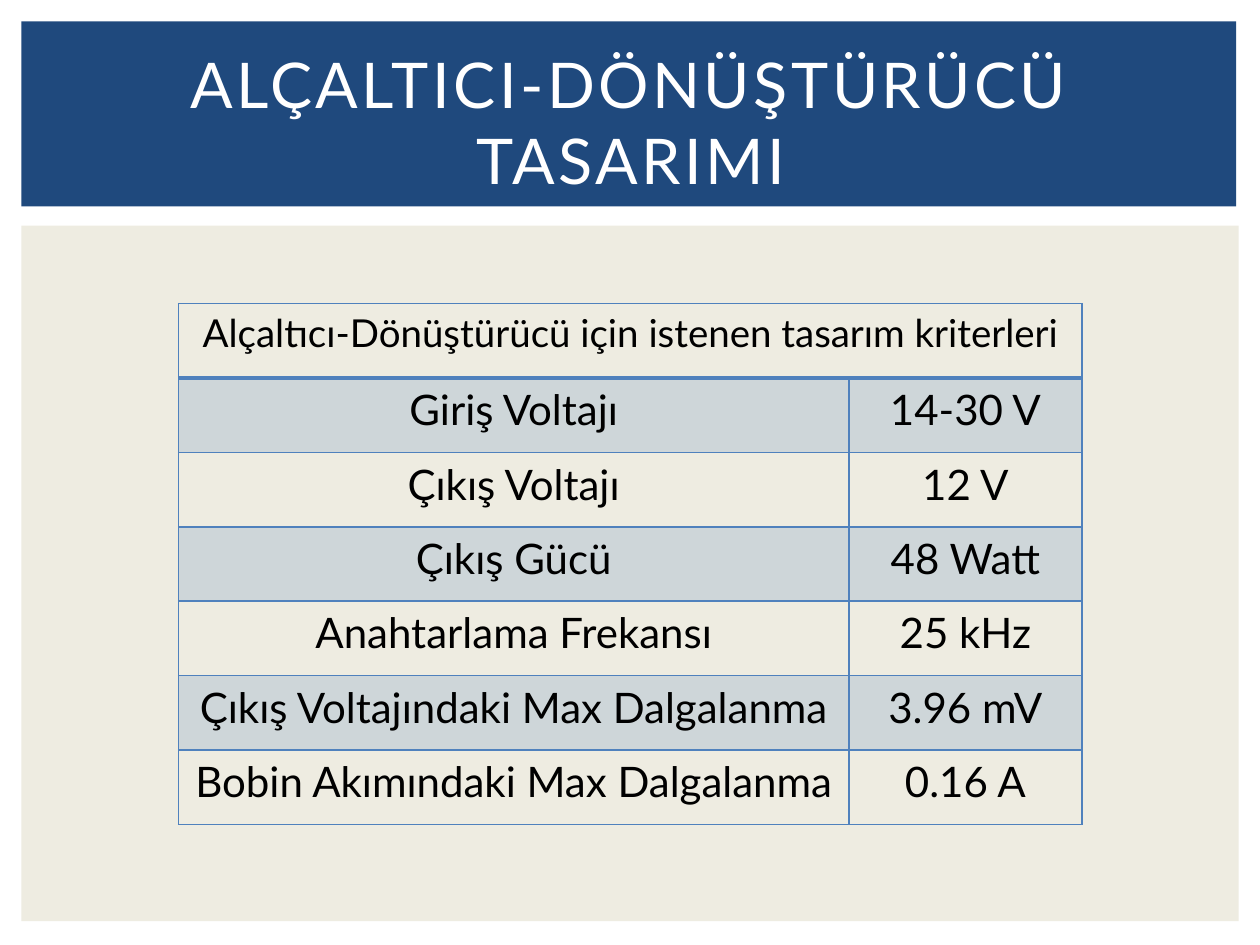
from dataclasses import dataclass

from lxml import etree
from pptx import Presentation
from pptx.dml.color import RGBColor
from pptx.enum.shapes import MSO_SHAPE
from pptx.enum.text import MSO_ANCHOR, MSO_AUTO_SIZE, PP_ALIGN
from pptx.oxml.ns import qn
from pptx.util import Cm, Pt

RECT = MSO_SHAPE.RECTANGLE
MIDDLE = MSO_ANCHOR.MIDDLE
FIXED = MSO_AUTO_SIZE.NONE
CENTER = PP_ALIGN.CENTER

FONT = "Lato"
COLORS = {
    "panel": "EEECE1",
    "band": "1F497D",
    "line": "4F81BD",
    "title": "FFFFFF",
    "text": "000000",
}
SIDES = ("lnL", "lnR", "lnT", "lnB")


@dataclass
class Panel:
    left: float
    top: float
    width: float
    height: float
    color: str


@dataclass
class Row:
    label: str
    value: str


PANELS = [
    Panel(0.43, 4.55, 24.54, 14.02, "panel"),
    Panel(0.43, 0.43, 24.49, 3.73, "band"),
]
TITLE = "ALÇALTICI-DÖNÜŞTÜRÜCÜ TASARIMI"
HEADER = "Alçaltıcı-Dönüştürücü için istenen tasarım kriterleri"
ROWS = [
    Row("Giriş Voltajı", "14-30 V"),
    Row("Çıkış Voltajı", "12 V"),
    Row("Çıkış Gücü", "48 Watt"),
    Row("Anahtarlama Frekansı", "25 kHz"),
    Row("Çıkış Voltajındaki Max Dalgalanma", "3.96 mV"),
    Row("Bobin Akımındaki Max Dalgalanma", "0.16 A"),
]
WIDTHS = (13.51, 4.7)
HEIGHT = 1.5


def rgb(name: str) -> RGBColor:
    return RGBColor.from_string(COLORS[name])


def write(frame, text: str, size: int, color: str) -> None:
    frame.text = text
    para = frame.paragraphs[0]
    para.alignment = CENTER
    font = para.runs[0].font
    font.name, font.size = FONT, Pt(size)
    font.color.rgb = rgb(color)


def draw_panel(slide, panel: Panel) -> None:
    box = slide.shapes.add_shape(
        RECT, Cm(panel.left), Cm(panel.top), Cm(panel.width), Cm(panel.height))
    box.shadow.inherit = False
    box.fill.solid()
    box.fill.fore_color.rgb = rgb(panel.color)
    box.line.fill.background()


def draw_title(slide) -> None:
    title = slide.shapes.title
    title.left, title.top = Cm(1.07), Cm(0.99)
    title.width, title.height = Cm(23.29), Cm(2.92)
    frame = title.text_frame
    write(frame, TITLE, 36, "title")
    frame.vertical_anchor = MIDDLE
    frame.word_wrap = True
    frame.auto_size = FIXED
    # Letter spacing of 2 pt
    frame.paragraphs[0].runs[0].font._element.set("spc", "200")
    # Bring the title in front of the panels
    title.element.getparent().append(title.element)


def set_fill(cell, tinted: bool) -> None:
    if not tinted:
        cell.fill.background()
        return
    cell.fill.solid()
    cell.fill.fore_color.rgb = rgb("line")
    tone = cell._tc.tcPr.find(".//" + qn("a:srgbClr"))
    etree.SubElement(tone, qn("a:alpha"), val="20000")


def set_edges(cell, top: int, bottom: int) -> None:
    props = cell._tc.get_or_add_tcPr()
    for spot, (side, width) in enumerate(zip(SIDES, (1, 1, top, bottom))):
        line = etree.Element(qn("a:" + side), w=str(Pt(width)))
        fill = etree.SubElement(line, qn("a:solidFill"))
        etree.SubElement(fill, qn("a:srgbClr"), val=COLORS["line"])
        props.insert(spot, line)


def draw_table(slide) -> None:
    count = len(ROWS) + 1
    table = slide.shapes.add_table(
        count, len(WIDTHS), Cm(3.6), Cm(6.12),
        Cm(sum(WIDTHS)), Cm(HEIGHT * count)).table
    table.first_row = table.horz_banding = False
    for col, width in zip(table.columns, WIDTHS):
        col.width = Cm(width)

    # Fills and borders; a thicker rule lies under the header
    for index, row in enumerate(table.rows):
        row.height = Cm(HEIGHT)
        for cell in row.cells:
            set_fill(cell, index % 2 == 1)
            set_edges(cell, 2 if index == 1 else 1, 2 if index == 0 else 1)

    # Header across both columns, then the criteria
    table.cell(0, 0).merge(table.cell(0, 1))
    write(table.cell(0, 0).text_frame, HEADER, 22, "text")
    for index, row in enumerate(ROWS, 1):
        for col, text in enumerate((row.label, row.value)):
            write(table.cell(index, col).text_frame, text, 24, "text")


def main() -> None:
    deck = Presentation()
    deck.slide_width, deck.slide_height = Cm(25.4), Cm(19.05)
    slide = deck.slides.add_slide(deck.slide_layouts[5])
    for panel in PANELS:
        draw_panel(slide, panel)
    draw_title(slide)
    draw_table(slide)
    deck.save("out.pptx")


if __name__ == "__main__":
    main()
